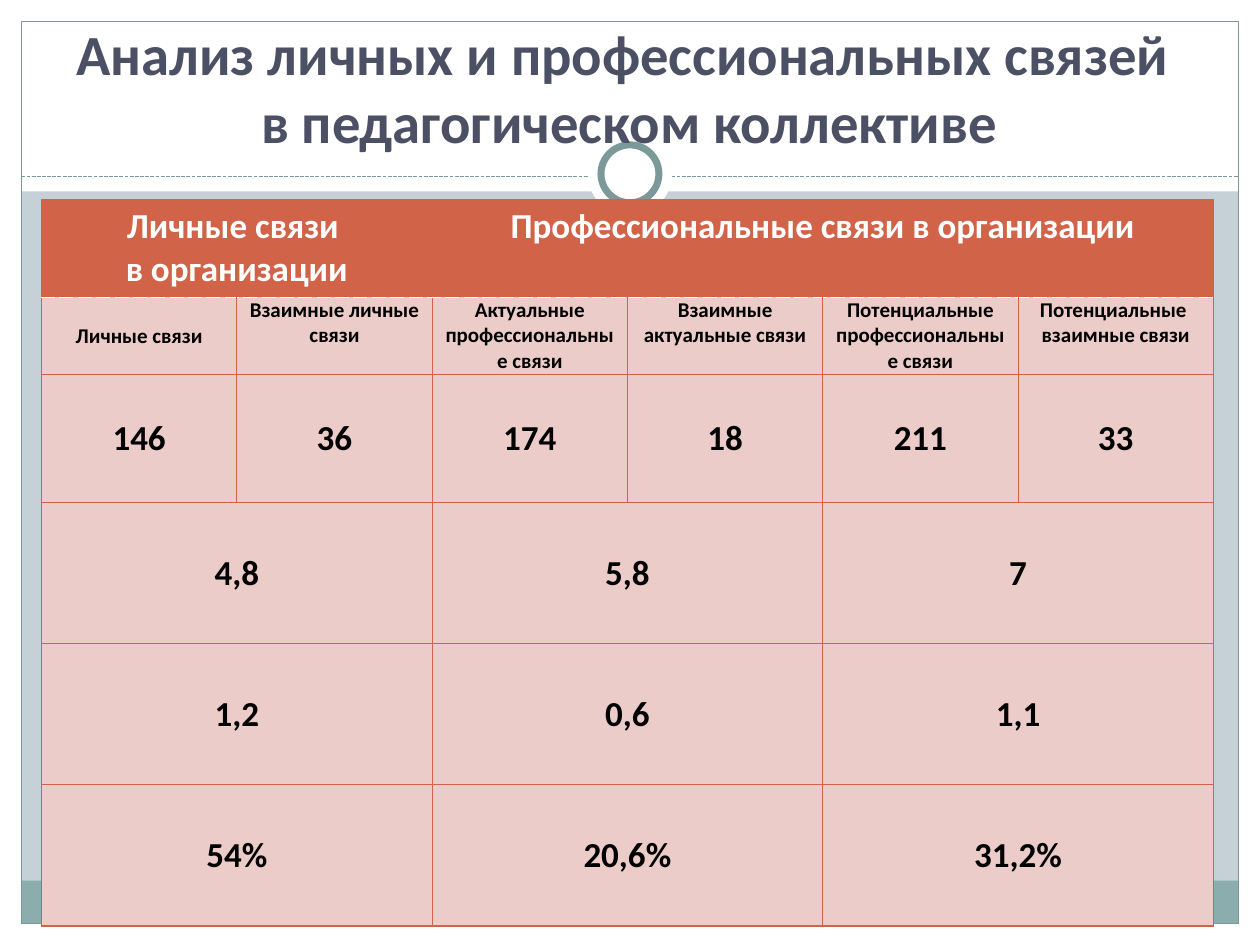
"""Build a slide with a table of personal and professional ties in a teaching staff."""
from lxml.etree import SubElement
from pptx import Presentation
from pptx.dml.color import RGBColor
from pptx.enum.dml import MSO_LINE
from pptx.enum.shapes import MSO_CONNECTOR, MSO_SHAPE
from pptx.enum.text import MSO_ANCHOR, MSO_AUTO_SIZE, PP_ALIGN
from pptx.oxml import parse_xml
from pptx.oxml.ns import nsdecls, qn
from pptx.util import Inches, Pt

C = {"back": "C5D1D7", "white": "FFFFFF", "band": "8CADAE", "frame": "7C999A",
     "title": "4B5064", "head": "D16349", "cell": "ECCCC8", "text": "000000"}


def write(tf, text, size=20, color="text"):
    tf.word_wrap = True
    for i, line in enumerate(text.split("\n")):
        p = tf.paragraphs[0] if i == 0 else tf.add_paragraph()
        p.alignment = PP_ALIGN.CENTER
        p.space_before = Pt(0)
        r = p.add_run()
        r.text = line
        r.font.name = "Calibri"
        r.font.size = Pt(size)
        r.font.bold = True
        r.font.color.rgb = RGBColor.from_string(C[color])


def border(cell, side, color="head", width=0.75, dash="solid"):
    cell._tc.get_or_add_tcPr().append(parse_xml(
        f'<a:ln{side} {nsdecls("a")} w="{Pt(width)}"><a:solidFill><a:srgbClr val="{C[color]}"/>'
        f'</a:solidFill><a:prstDash val="{dash}"/></a:ln{side}>'))


prs = Presentation()
prs.slide_width, prs.slide_height = Inches(10), Inches(7.5)
W, H = prs.slide_width, prs.slide_height
s = prs.slides.add_slide(prs.slide_layouts[5])
s.background.fill.solid()
s.background.fill.fore_color.rgb = RGBColor.from_string(C["back"])

edge = Inches(0.17)
rule_y = Inches(1.4)
ring_y = Inches(1.38)
inner = W - 2 * edge
halo, ring = Inches(0.67), Inches(0.46)

decor = [
    (MSO_SHAPE.RECTANGLE, 0, H - edge, W, edge, "white", 0),
    (MSO_SHAPE.RECTANGLE, 0, 0, W, Inches(1.52), "white", 0),
    (MSO_SHAPE.RECTANGLE, 0, 0, edge, H, "white", 0),
    (MSO_SHAPE.RECTANGLE, W - edge, 0, edge, H, "white", 0),
    (MSO_SHAPE.RECTANGLE, edge, Inches(6.99), inner, Inches(0.34), "band", 0),
    (MSO_SHAPE.RECTANGLE, edge, edge, inner, H - 2 * edge, None, 0.75),
    (MSO_CONNECTOR.STRAIGHT, edge, rule_y, W - edge, rule_y, None, 0.75),
    (MSO_SHAPE.OVAL, (W - halo) // 2, ring_y - halo // 2, halo, halo, "white", 0),
    (MSO_SHAPE.OVAL, (W - ring) // 2, ring_y - ring // 2, ring, ring, "white", 4),
]
for kind, x, y, w, h, fill, line in decor:
    if kind is MSO_CONNECTOR.STRAIGHT:
        sp = s.shapes.add_connector(kind, x, y, w, h)
        sp.line.dash_style = MSO_LINE.SQUARE_DOT
        SubElement(sp.element.spPr, qn("a:effectLst"))
    else:
        sp = s.shapes.add_shape(kind, x, y, w, h)
        sp.shadow.inherit = False
        if fill:
            sp.fill.solid()
            sp.fill.fore_color.rgb = RGBColor.from_string(C[fill])
        else:
            sp.fill.background()
    if line:
        sp.line.width = Pt(line)
        sp.line.color.rgb = RGBColor.from_string(C["frame"])
    else:
        sp.line.fill.background()

title = s.shapes.title
title.element.getparent().append(title.element)
title.left, title.top, title.width, title.height = [Inches(v) for v in (0.33, 0.25, 9.33, 1.51)]
tf = title.text_frame
tf.auto_size = MSO_AUTO_SIZE.NONE
tf.vertical_anchor = MSO_ANCHOR.BOTTOM
tf.margin_top, tf.margin_bottom = 0, Inches(0.53)
write(tf, "Анализ личных и профессиональных связей \nв педагогическом коллективе",
      size=32.4, color="title")

rows = [
    [("Личные связи \nв организации", 2), ("Профессиональные связи в организации", 4)],
    [("Личные связи", 1), ("Взаимные личные связи", 1),
     ("Актуальные профессиональные связи", 1), ("Взаимные актуальные связи", 1),
     ("Потенциальные профессиональные связи", 1), ("Потенциальные \nвзаимные связи", 1)],
    [(v, 1) for v in ("146", "36", "174", "18", "211", "33")],
    [(v, 2) for v in ("4,8", "5,8", "7")],
    [(v, 2) for v in ("1,2", "0,6", "1,1")],
    [(v, 2) for v in ("54%", "20,6%", "31,2%")],
]
heights = [0.78, 0.61, 1.02, 1.12, 1.12, 1.12]
tbl = s.shapes.add_table(len(rows), 6, Inches(0.33), Inches(1.58),
                         Inches(9.3), Inches(sum(heights))).table
for column in tbl.columns:
    column.width = Inches(1.55)

for i, (row, height) in enumerate(zip(rows, heights)):
    tbl.rows[i].height = Inches(height)
    head = i == 0
    j = 0
    for text, span in row:
        cell = tbl.cell(i, j)
        if span > 1:
            cell.merge(tbl.cell(i, j + span - 1))
        cell.margin_left = cell.margin_right = Inches(0.1 if span > 1 else 0.07)
        cell.margin_top = cell.margin_bottom = Inches(0.05 if span > 1 else 0)
        cell.vertical_anchor = MSO_ANCHOR.TOP if head or (i == 1 and j) else MSO_ANCHOR.MIDDLE
        write(cell.text_frame, text, size=12 if i == 1 else 20,
              color="white" if head else "text")
        for k in range(j, j + span):
            part = tbl.cell(i, k)
            for side in "LRTB" if k == j else "TB":
                if (i, side) in ((0, "B"), (1, "T")):
                    border(part, side, "white", 0.9, "sysDash")
                else:
                    border(part, side)
            part.fill.solid()
            part.fill.fore_color.rgb = RGBColor.from_string(C["head" if head else "cell"])
        j += span

prs.save("out.pptx")
